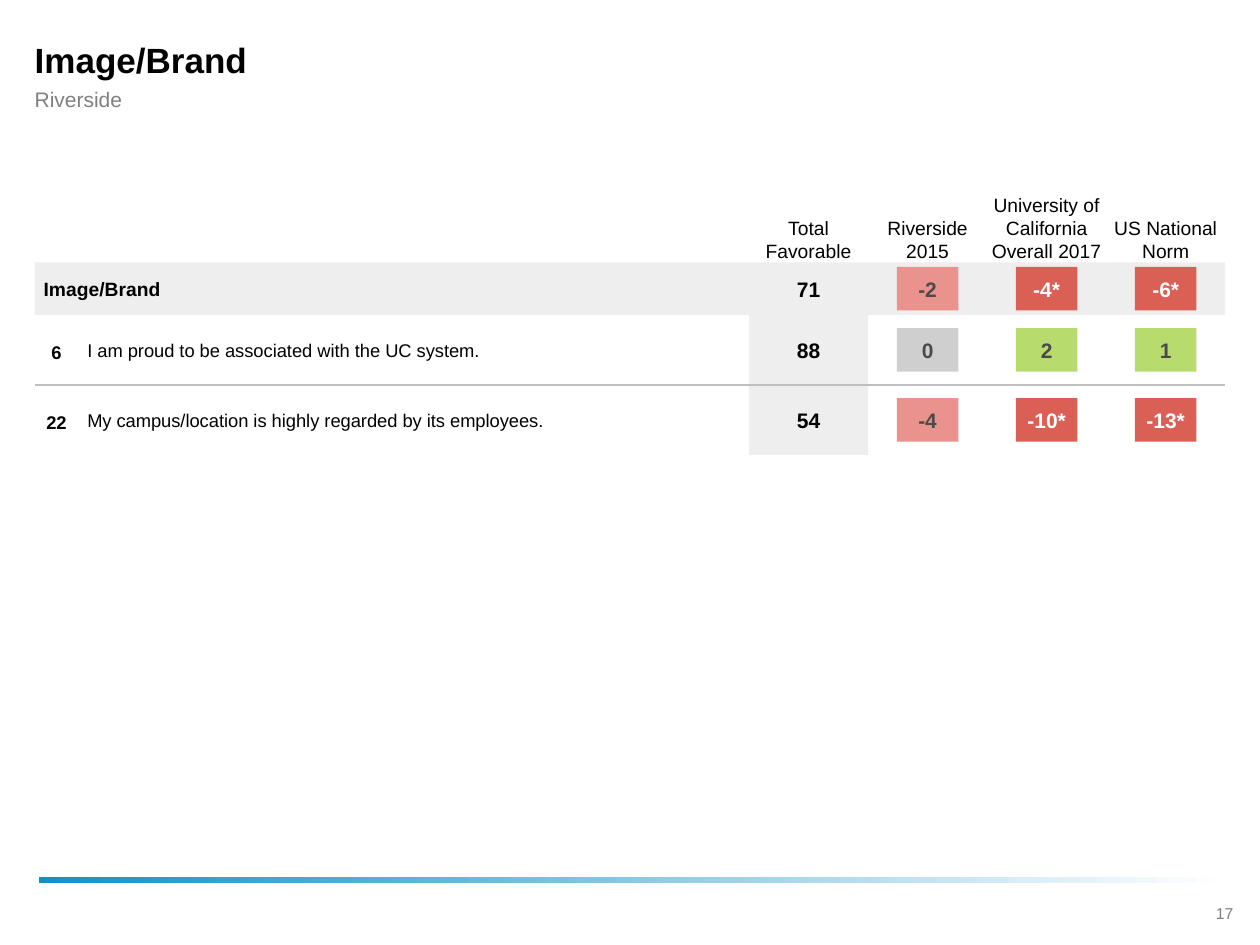
import pptx
import pptx.dml.color
import pptx.enum.shapes
import pptx.enum.text
import pptx.oxml
import pptx.util

Cm, Pt = pptx.util.Cm, pptx.util.Pt
ALIGN = pptx.enum.text.PP_ALIGN
ANCHOR = pptx.enum.text.MSO_ANCHOR

COLORS = {
    "black": "000000", "white": "FFFFFF", "grey": "808080", "page": "7F7F7F",
    "band": "EEEEEE", "rule": "BFBFBF", "blue": "1291C7", "ink": "4A4A4A",
    "lower": "E9928E", "much lower": "DA6056", "same": "CFCFCF", "higher": "B7DB6C",
}

LEFT, WIDTH = 0.7, 24
COLUMN = 2.4
SCORES = LEFT + WIDTH - 4 * COLUMN
TABLE_TOP, HEAD_HEIGHT, ROW_HEIGHT = 5.29, 1.06, 1.41
NUMBER_WIDTH = 0.88
CHIP_WIDTH, CHIP_HEIGHT = 1.24, 0.88

HEADINGS = ["Total Favorable", "Riverside 2015",
            "University of California Overall 2017", "US National Norm"]
# number, statement, total favorable, differences with their rating
ROWS = [
    (None, "Image/Brand", "71",
     [("-2", "lower"), ("-4*", "much lower"), ("-6*", "much lower")]),
    ("6", "I am proud to be associated with the UC system.", "88",
     [("0", "same"), ("2", "higher"), ("1", "higher")]),
    ("22", "My campus/location is highly regarded by its employees.", "54",
     [("-4", "lower"), ("-10*", "much lower"), ("-13*", "much lower")]),
]


class Painter:
    """Holds the style and the slide being filled."""

    font = "Arial"

    def __init__(self, page):
        self.page = page

    def color(self, name):
        return pptx.dml.color.RGBColor.from_string(COLORS[name])

    def set_text(self, shape, words, size, color="black", bold=False, align=ALIGN.LEFT,
                 anchor=ANCHOR.MIDDLE, insets=(0, 0, 0, 0), wrap=True):
        frame = shape.text_frame
        frame.auto_size = pptx.enum.text.MSO_AUTO_SIZE.NONE
        frame.word_wrap = wrap
        frame.vertical_anchor = anchor
        (frame.margin_left, frame.margin_top,
         frame.margin_right, frame.margin_bottom) = map(Cm, insets)
        frame.text = words
        para = frame.paragraphs[0]
        para.alignment = align
        para.font.name = self.font
        para.font.size = Pt(size)
        para.font.bold = bold
        para.font.color.rgb = self.color(color)

    def title(self, words, left, top, width, height):
        box = self.page.shapes.title
        box.left, box.top, box.width, box.height = map(Cm, (left, top, width, height))
        self.set_text(box, words, 20, bold=True, insets=(0, 0, 0.88, 0))

    def text(self, words, left, top, width, height, size, **style):
        box = self.page.shapes.add_textbox(*map(Cm, (left, top, width, height)))
        self.set_text(box, words, size, **style)

    def rectangle(self, left, top, width, height, fill):
        box = self.page.shapes.add_shape(
            pptx.enum.shapes.MSO_SHAPE.RECTANGLE, *map(Cm, (left, top, width, height)))
        box.shadow.inherit = False
        box.line.fill.background()
        box.fill.solid()
        box.fill.fore_color.rgb = self.color(fill)
        return box

    def fading_bar(self, left, top, width, height, start, end):
        fill = self.rectangle(left, top, width, height, start).fill
        fill.gradient()
        fill.gradient_angle = 0
        for stop, name, position in zip(fill.gradient_stops, (start, end), (0, 1)):
            stop.color.rgb = self.color(name)
            stop.position = position

    def chip(self, words, center, middle, rating):
        box = self.rectangle(center - CHIP_WIDTH / 2, middle - CHIP_HEIGHT / 2,
                             CHIP_WIDTH, CHIP_HEIGHT, rating)
        ink = "white" if rating == "much lower" else "ink"
        self.set_text(box, words, 12, color=ink, bold=True, align=ALIGN.CENTER,
                      insets=(0, 0.13, 0, 0.13), wrap=False)

    def rule(self, left, top, width):
        line = self.page.shapes.add_connector(
            pptx.enum.shapes.MSO_CONNECTOR.STRAIGHT,
            *map(Cm, (left, top, left + width, top)))
        line.line.color.rgb = self.color("rule")
        line.line.width = Pt(0.75)
        properties = line._element.spPr
        properties.append(pptx.oxml.xmlchemy.OxmlElement("a:effectLst"))


def draw_row(painter, index, number, statement, total, differences):
    heading = index == 0
    height = HEAD_HEIGHT if heading else ROW_HEIGHT
    top = TABLE_TOP if heading else TABLE_TOP + HEAD_HEIGHT + (index - 1) * ROW_HEIGHT
    middle = top + height / 2

    if heading:
        painter.rectangle(LEFT, top, SCORES - LEFT, height, "band")
    for column in range(4 if heading else 1):
        painter.rectangle(SCORES + column * COLUMN, top, COLUMN, height, "band")

    if heading:
        painter.text(statement, LEFT, top, SCORES - LEFT, height, 11, bold=True,
                     insets=(0.18, 0, 0.18, 0))
    else:
        painter.text(number, LEFT, middle - 0.24, NUMBER_WIDTH, 0.56, 10.5,
                     bold=True, align=ALIGN.CENTER)
        painter.text(statement, LEFT + NUMBER_WIDTH, middle - 0.58, 12.95, 1.16, 10.5,
                     insets=(0.18, 0, 0.88, 0))
    painter.text(total, SCORES, middle - 0.24, COLUMN, 0.48, 12,
                 bold=True, align=ALIGN.CENTER)
    for column, (words, rating) in enumerate(differences, 1):
        painter.chip(words, SCORES + (column + 0.5) * COLUMN, middle, rating)


def main():
    deck = pptx.Presentation()
    deck.slide_width, deck.slide_height = Cm(25.4), Cm(19.05)
    painter = Painter(deck.slides.add_slide(deck.slide_layouts[5]))

    painter.fading_bar(0.78, 17.68, 23.93, 0.13, "blue", "white")
    painter.text("17", 24.03, 18.08, 1.32, 0.64, 9, color="page", align=ALIGN.CENTER,
                 insets=(0.25, 0.13, 0.25, 0.13))
    painter.title("Image/Brand", LEFT, 0.71, WIDTH, 0.97)
    painter.text("Riverside", LEFT, 1.73, WIDTH, 0.53, 12, color="grey",
                 insets=(0, 0, 0.88, 0))

    for column, heading in enumerate(HEADINGS):
        painter.text(heading, SCORES + column * COLUMN, TABLE_TOP - 2.82, COLUMN, 2.82, 11,
                     align=ALIGN.CENTER, anchor=ANCHOR.BOTTOM)
    for index, row in enumerate(ROWS):
        draw_row(painter, index, *row)
    for gap in range(1, len(ROWS) - 1):
        painter.rule(LEFT, TABLE_TOP + HEAD_HEIGHT + gap * ROW_HEIGHT, WIDTH)

    deck.save("out.pptx")


if __name__ == "__main__":
    main()
